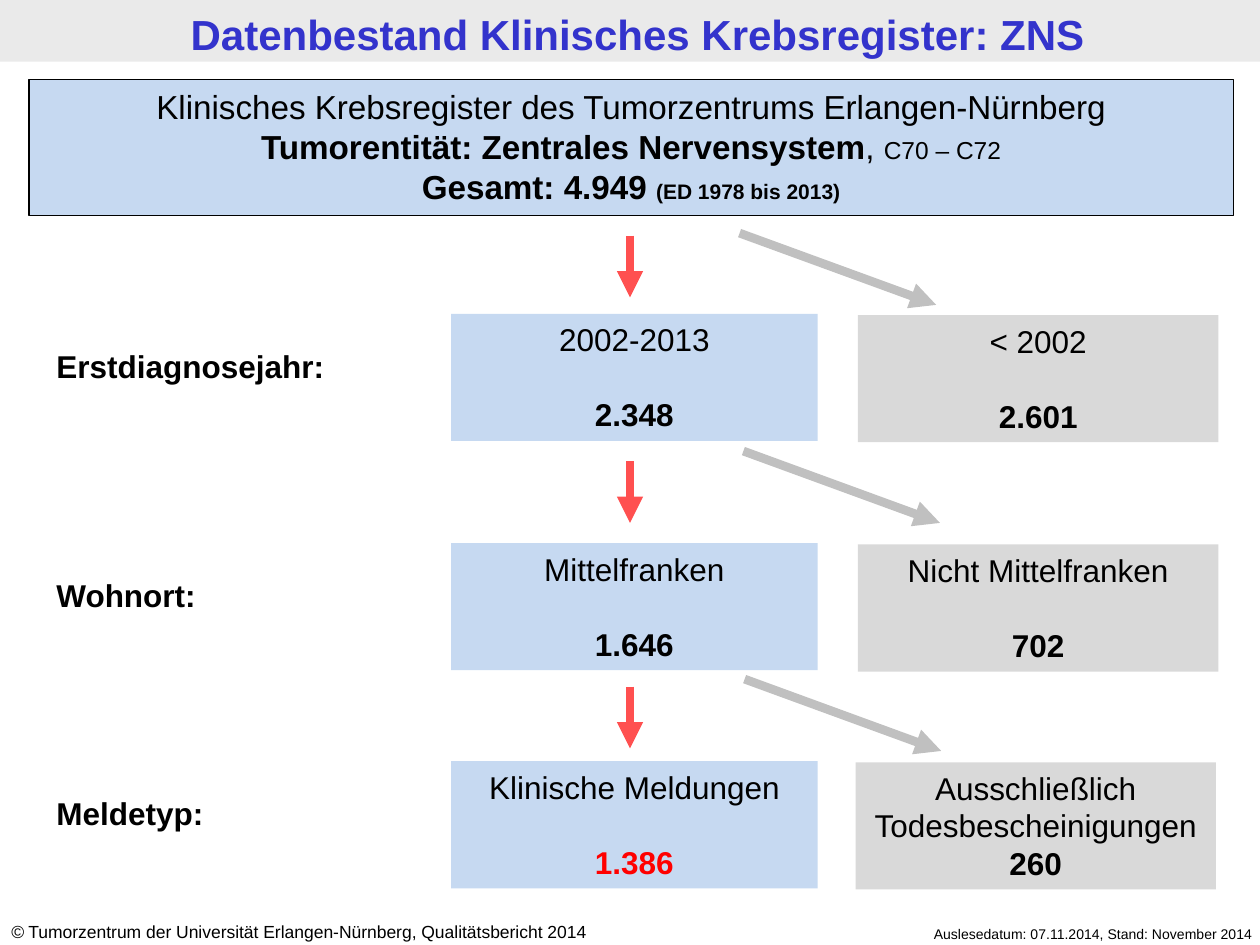
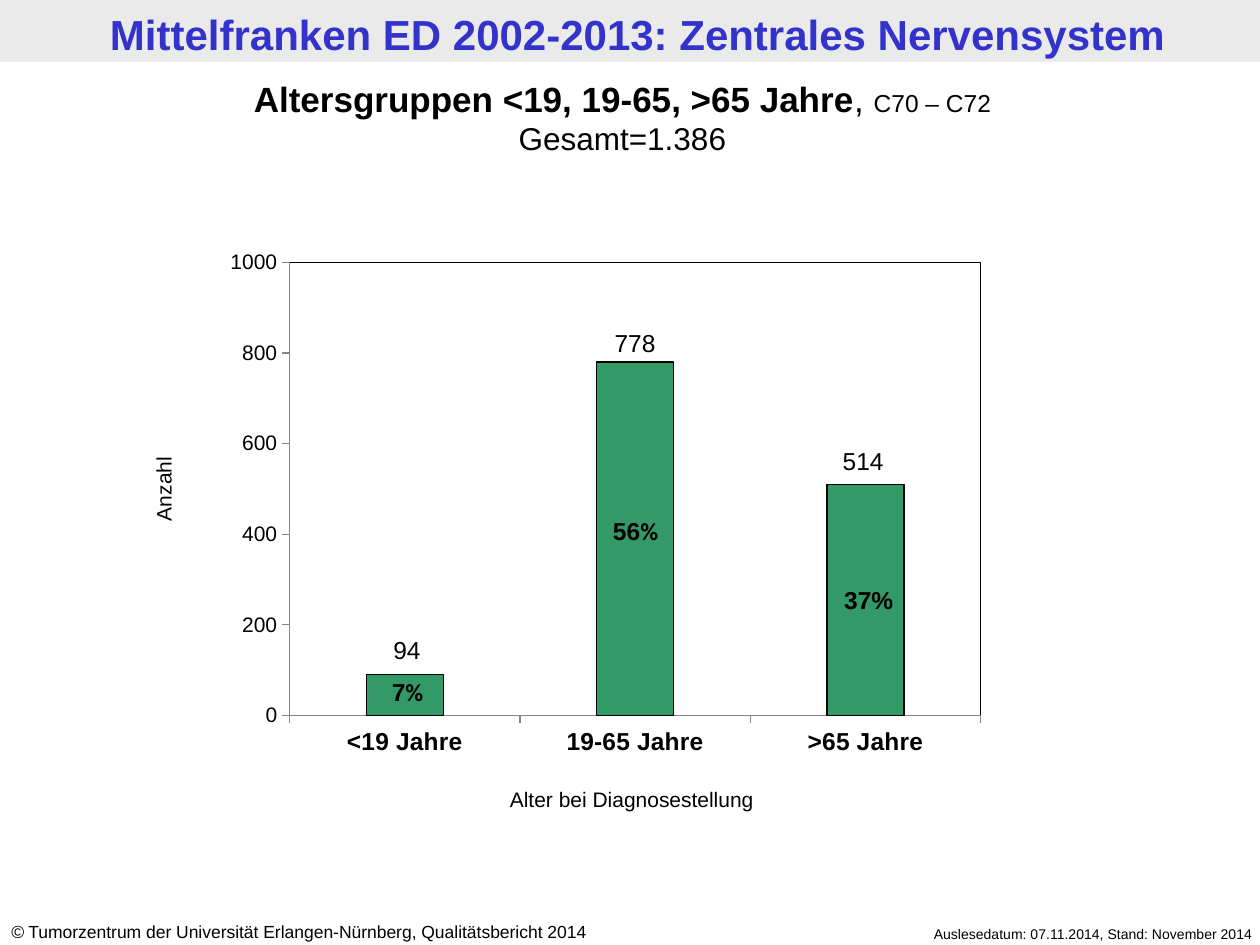
from dataclasses import dataclass
from lxml.etree import SubElement, fromstring
from pptx import Presentation
from pptx.chart.data import CategoryChartData
from pptx.dml.color import RGBColor
from pptx.enum.chart import XL_CHART_TYPE, XL_TICK_MARK
from pptx.enum.shapes import MSO_CONNECTOR, MSO_SHAPE
from pptx.enum.text import MSO_ANCHOR, MSO_AUTO_SIZE, PP_ALIGN
from pptx.oxml.ns import nsdecls, qn
from pptx.util import Inches, Pt


@dataclass(frozen=True)
class Theme:
    font: str = "Arial"
    chart_font: str = "Calibri"
    text: str = "000000"
    title: str = "3333CC"
    band: str = "EAEAEA"
    kept: str = "C6D9F1"
    dropped: str = "D9D9D9"
    kept_arrow: str = "FF5050"
    dropped_arrow: str = "C0C0C0"
    result: str = "FF0000"
    bar: str = "339966"
    axis: str = "868686"
    title_size: int = 24
    heading_size: int = 20
    register_size: int = 19
    body_size: int = 18
    label_size: int = 14
    small_size: int = 12
    footer_size: int = 10
    date_size: int = 8
    line_height: float = 1.18


T = Theme()
BOLD = {"bold": True}
ICD = ("C70 – C72", {"size": T.label_size})

TITLES = ["Datenbestand Klinisches Krebsregister: ZNS",
          "Mittelfranken ED 2002-2013: Zentrales Nervensystem"]
COPYRIGHT = [[("©", {"italic": True}),
              (" Tumorzentrum der Universität Erlangen-Nürnberg, Qualitätsbericht 2014", {})]]
DATE = [[("Auslesedatum: 07.11.2014, Stand: November 2014", {})]]

REGISTER = [
    [("Klinisches Krebsregister des Tumorzentrums Erlangen-Nürnberg", {})],
    [("Tumorentität: Zentrales Nervensystem", BOLD), (", ", {}), ICD],
    [("Gesamt: 4.949 ", BOLD), ("(ED 1978 bis 2013)", {"bold": True, "size": T.small_size})],
]
STEPS = [
    {"label": "Erstdiagnosejahr:", "top": 2.49, "kept": ("2002-2013", "2.348"),
     "dropped": ("< 2002", "2.601"), "dropped_left": 6.81, "branch": (5.87, 1.85)},
    {"label": "Wohnort:", "top": 4.31, "kept": ("Mittelfranken", "1.646"),
     "dropped": ("Nicht Mittelfranken", "702"), "dropped_left": 6.81, "branch": (5.9, 3.58)},
    {"label": "Meldetyp:", "top": 6.04, "kept": ("Klinische Meldungen", "1.386"),
     "dropped": ("Ausschließlich Todesbescheinigungen", "260"), "dropped_left": 6.79,
     "branch": (5.91, 5.39)},
]

HEADING = [
    [("Altersgruppen <19, 19-65, >65 Jahre", BOLD), (", ", {}), ICD],
    [("Gesamt=1.386", {"size": T.body_size})],
]
AGE_GROUPS = {"<19 Jahre": 90, "19-65 Jahre": 780, ">65 Jahre": 510}
PERCENT = ("%", {"bold": True, "name": T.chart_font})
BAR_LABELS = [
    ((2.72, 4.99, 1.02, 0.34), [("94", {})]),
    ((4.53, 2.55, 1.02, 0.34), [("778", {})]),
    ((6.34, 3.49, 1.02, 0.34), [("514", {})]),
    ((2.8, 5.32, 0.87, 0.34), [("7", BOLD), PERCENT]),
    ((4.61, 4.04, 0.87, 0.34), [("56", BOLD), PERCENT]),
    ((6.42, 4.59, 0.95, 0.34), [("37%", BOLD)]),
]
AXIS_TITLES = [
    ((3.35, 6.19, 3.33, 0.3), "Alter bei Diagnosestellung", 0),
    ((-0.01, 3.73, 2.61, 0.3), "Anzahl", 270),
]
PLOT = {"x": 0.113, "y": 0.142, "w": 0.786, "h": 0.772}


def inches(*values):
    return [Inches(v) for v in values]


def set_font(font, **fmt):
    color = fmt.pop("color", T.text)
    for name, value in {"name": T.font, "bold": False, **fmt}.items():
        setattr(font, name, Pt(value) if name == "size" else value)
    font.color.rgb = RGBColor.from_string(color)


def write(sp, paragraphs, size, align=PP_ALIGN.CENTER, gap=0, bottom=0.06, **fmt):
    tf = sp.text_frame
    frame = {"word_wrap": True, "auto_size": MSO_AUTO_SIZE.NONE,
             "vertical_anchor": MSO_ANCHOR.MIDDLE, "margin_bottom": Inches(bottom)}
    for name, value in frame.items():
        setattr(tf, name, value)
    for i, runs in enumerate(paragraphs):
        p = tf.paragraphs[0] if i == 0 else tf.add_paragraph()
        p.alignment = align
        if i and gap:
            p.space_before = Pt(gap)
        for text, run_fmt in runs:
            r = p.add_run()
            r.text = text
            set_font(r.font, **{"size": size, **fmt, **run_fmt})


def add_text(s, at, paragraphs, size, **fmt):
    sp = s.shapes.add_textbox(*inches(*at))
    write(sp, paragraphs, size, **fmt)
    return sp


def add_rect(s, at, fill, line=None):
    sp = s.shapes.add_shape(MSO_SHAPE.RECTANGLE, *inches(*at))
    sp.shadow.inherit = False
    sp.fill.solid()
    sp.fill.fore_color.rgb = RGBColor.from_string(fill)
    if line:
        set_line(sp.line, line, 0.75)
    else:
        sp.line.fill.background()
    return sp


def set_line(line, color, width):
    line.color.rgb = RGBColor.from_string(color)
    line.width = Pt(width)


def add_arrow(s, x1, y1, x2, y2, color):
    c = s.shapes.add_connector(MSO_CONNECTOR.STRAIGHT, *inches(x1, y1, x2, y2))
    set_line(c.line, color, 5)
    SubElement(c.line._get_or_add_ln(), qn("a:tailEnd"), type="triangle")
    SubElement(c._element.spPr, qn("a:effectLst"))


def add_slide(prs, title):
    s = prs.slides.add_slide(prs.slide_layouts[5])
    band = add_rect(s, (0, 0, 10, 0.49), T.band)
    s.shapes._spTree.insert(2, band._element)
    sp = s.shapes.title
    box = dict(zip(("left", "top", "width", "height"), inches(0.06, 0.01, 10, 0.49)))
    for name, value in box.items():
        setattr(sp, name, value)
    write(sp, [[(title, BOLD)]], T.title_size, bottom=0.03, color=T.title)
    add_text(s, (6.65, 7.29, 3.39, 0.24), DATE, T.date_size, align=PP_ALIGN.RIGHT, bottom=0.05)
    add_text(s, (-0.01, 7.26, 5.24, 0.27), COPYRIGHT, T.footer_size, align=PP_ALIGN.LEFT)
    return s


def add_count(s, at, fill, content, gap, color=T.text):
    name, count = content
    sp = add_rect(s, at, fill)
    write(sp, [[(name, {})], [(count, {"bold": True, "color": color})]], T.body_size, gap=gap)


def build_register(prs):
    s = add_slide(prs, TITLES[0])
    write(add_rect(s, (0.23, 0.63, 9.56, 1.08), T.kept, T.text), REGISTER, T.register_size,
          bottom=0.07)
    gap = T.body_size * T.line_height
    for i, step in enumerate(STEPS):
        last = i == len(STEPS) - 1
        top = step["top"]
        add_text(s, (0.35, top + 0.22, 2.76, 0.4), [[(step["label"], BOLD)]],
                 T.body_size, align=PP_ALIGN.LEFT)
        add_count(s, (3.58, top, 2.91, 1.01), T.kept, step["kept"], gap,
                  T.result if last else T.text)
        add_count(s, (step["dropped_left"], top + 0.01, 2.86, 1.01), T.dropped,
                  step["dropped"], 0 if last else gap)
        y = 1.87 + 1.79 * i
        add_arrow(s, 5, y, 5, y + 0.49, T.kept_arrow)
        bx, by = step["branch"]
        add_arrow(s, bx, by, bx + 1.56, by + 0.57, T.dropped_arrow)


def frame_plot(chart):
    area = chart._chartSpace.chart.plotArea
    for old in area.findall(qn("c:layout")):
        area.remove(old)
    modes = '<c:layoutTarget val="inner"/><c:xMode val="edge"/><c:yMode val="edge"/>'
    sizes = "".join(f'<c:{k} val="{v}"/>' for k, v in PLOT.items())
    area.insert(0, fromstring(
        f'<c:layout {nsdecls("c")}><c:manualLayout>{modes}{sizes}</c:manualLayout></c:layout>'))
    area.append(fromstring(
        f'<c:spPr {nsdecls("c", "a")}><a:noFill/><a:ln w="9525"><a:solidFill>'
        f'<a:srgbClr val="{T.text}"/></a:solidFill></a:ln></c:spPr>'))


def add_age_chart(s):
    data = CategoryChartData()
    data.categories = list(AGE_GROUPS)
    data.add_series("Anzahl", list(AGE_GROUPS.values()))
    chart = s.shapes.add_chart(XL_CHART_TYPE.COLUMN_STACKED,
                               *inches(1.51, 1.42, 6.98, 4.66), data).chart
    chart.has_legend = chart.has_title = False
    set_font(chart.font, size=T.body_size, name=T.chart_font)
    plot = chart.plots[0]
    for name, value in {"gap_width": 200, "overlap": 100, "vary_by_categories": False}.items():
        setattr(plot, name, value)
    bars = plot.series[0].format
    bars.fill.solid()
    bars.fill.fore_color.rgb = RGBColor.from_string(T.bar)
    set_line(bars.line, T.text, 0.75)
    for axis, size, bold in ((chart.category_axis, T.label_size, True),
                             (chart.value_axis, T.small_size, False)):
        axis.has_major_gridlines = False
        axis.major_tick_mark = XL_TICK_MARK.OUTSIDE
        axis.minor_tick_mark = XL_TICK_MARK.NONE
        set_line(axis.format.line, T.axis, 0.75)
        set_font(axis.tick_labels.font, size=size, bold=bold)
    scale = {"minimum_scale": 0, "maximum_scale": 1000, "major_unit": 200}
    for name, value in scale.items():
        setattr(chart.value_axis, name, value)
    frame_plot(chart)


def build_age_groups(prs):
    s = add_slide(prs, TITLES[1])
    add_age_chart(s)
    add_text(s, (0, 0.57, 9.88, 0.74), HEADING, T.heading_size, bottom=0.07)
    for at, runs in BAR_LABELS:
        add_text(s, at, [runs], T.label_size, bottom=0.05)
    for at, text, rotation in AXIS_TITLES:
        add_text(s, at, [[(text, {})]], T.small_size, bottom=0.05).rotation = rotation


def main():
    prs = Presentation()
    prs.slide_width, prs.slide_height = inches(10, 7.5)
    build_register(prs)
    build_age_groups(prs)
    prs.save("out.pptx")


if __name__ == "__main__":
    main()
